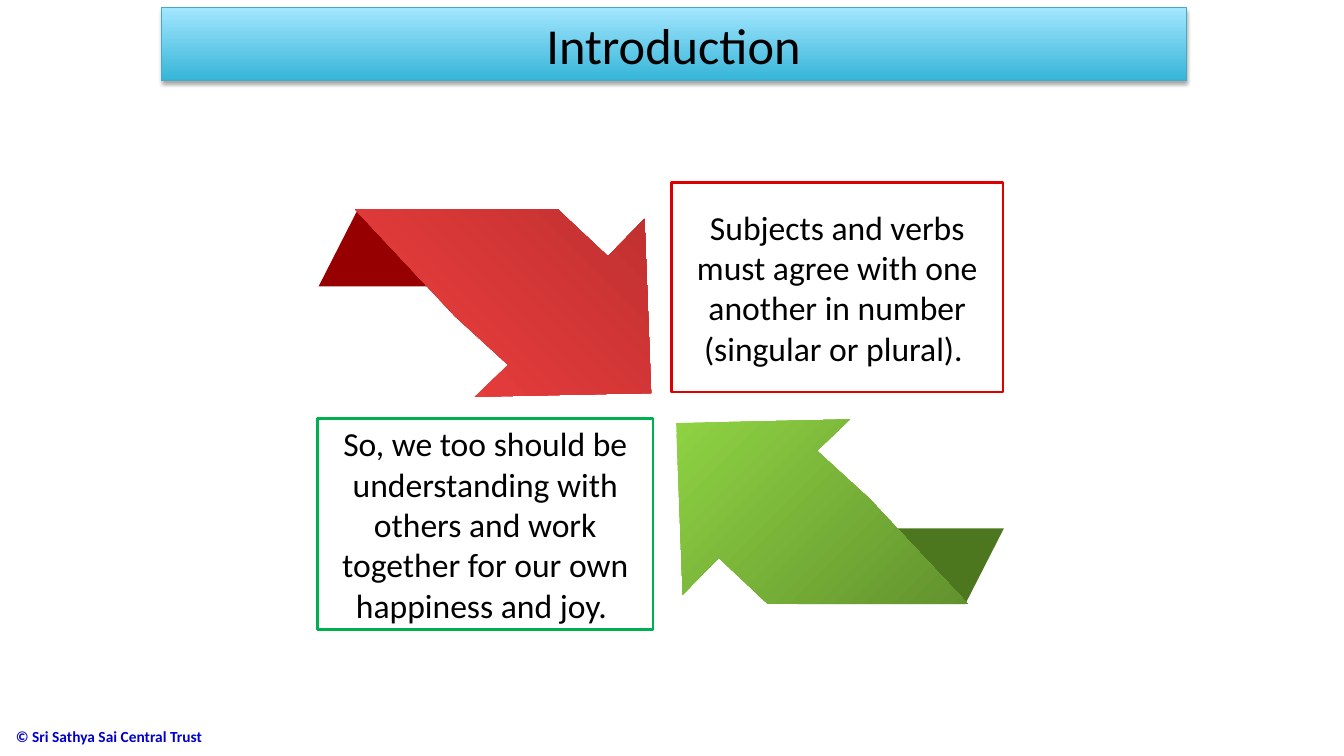
from pptx import Presentation
from pptx.dml.color import RGBColor
from pptx.enum.shapes import MSO_SHAPE
from pptx.enum.text import MSO_ANCHOR, PP_ALIGN
from pptx.oxml import parse_xml
from pptx.oxml.ns import nsdecls
from pptx.util import Cm, Pt

BLACK = RGBColor(0x00, 0x00, 0x00)
WHITE = RGBColor(0xFF, 0xFF, 0xFF)
BLUE = RGBColor(0x00, 0x00, 0xCC)
SKY = RGBColor(0xA3, 0xE6, 0xFF)
TEAL = RGBColor(0x36, 0xB5, 0xD8)
TEAL_LINE = RGBColor(0x46, 0xAA, 0xC5)
RED = RGBColor(0xDE, 0x00, 0x00)
RED_FOLD = RGBColor(0x96, 0x00, 0x00)
RED_LIGHT = RGBColor(0xF2, 0x40, 0x40)
RED_DARK = RGBColor(0xC0, 0x30, 0x30)
GREEN = RGBColor(0x00, 0xB0, 0x50)
GREEN_FOLD = RGBColor(0x4D, 0x77, 0x1F)
GREEN_LIGHT = RGBColor(0x8E, 0xD2, 0x43)
GREEN_DARK = RGBColor(0x62, 0x92, 0x2E)

ARROW = [(0.47, 1), (0.57, 0.83), (0.41, 0.57), (0.11, 0), (0.72, 0),
         (0.87, 0.25), (0.98, 0.05), (1, 0.98)]
FOLD_WIDTH, FOLD_HEIGHT = 0.63, 0.41


def set_gradient(shape, start, end, angle):
    """Fill a shape with a two-colour linear gradient."""
    shape.fill.gradient()
    shape.fill.gradient_angle = angle
    for stop, color in zip(shape.fill.gradient_stops, (start, end)):
        stop.color.rgb = color


def write(tf, text, size, color, align, bold=False):
    """Put one formatted paragraph in a middle-anchored text frame."""
    tf.word_wrap = True
    tf.vertical_anchor = MSO_ANCHOR.MIDDLE
    p = tf.paragraphs[0]
    p.text = text
    p.alignment = align
    p.font.name = "Calibri"
    p.font.size = Pt(size)
    p.font.bold = bold
    p.font.color.rgb = color


def add_title(s, left, top, width, height):
    """Turn the title placeholder into the gradient banner."""
    sp = s.shapes.title
    sp.left, sp.top, sp.width, sp.height = left, top, width, height
    set_gradient(sp, SKY, TEAL, 270)
    sp.line.color.rgb = TEAL_LINE
    sp.line.width = Pt(0.75)
    sp._element.spPr.append(parse_xml(
        f'<a:effectLst {nsdecls("a")}><a:outerShdw blurRad="40000" dist="23000" '
        'dir="5400000" rotWithShape="0"><a:srgbClr val="000000">'
        '<a:alpha val="35000"/></a:srgbClr></a:outerShdw></a:effectLst>'))
    write(sp.text_frame, "Introduction", 36, BLACK, PP_ALIGN.CENTER)


def add_folded_arrow(s, left, top, width, height, fold, light, dark, angle, turned=False):
    """Draw an arrow with a folded tail, turned half a circle if asked."""
    fold_w, fold_h = int(width * FOLD_WIDTH), int(height * FOLD_HEIGHT)
    x = left + width - fold_w if turned else left
    y = top + height - fold_h if turned else top
    tail = s.shapes.add_shape(MSO_SHAPE.PARALLELOGRAM, x, y, fold_w, fold_h)
    tail.adjustments[0] = 0.51
    tail.fill.solid()
    tail.fill.fore_color.rgb = fold

    points = [(1 - fx, 1 - fy) if turned else (fx, fy) for fx, fy in ARROW]
    points = [(int(left + fx * width), int(top + fy * height)) for fx, fy in points]
    builder = s.shapes.build_freeform(*points[0])
    builder.add_line_segments(points[1:], close=True)
    head = builder.convert_to_shape()
    set_gradient(head, light, dark, angle)
    for sp in (tail, head):
        sp.line.fill.background()
        sp.shadow.inherit = False


def add_statement(s, left, top, width, height, text, color):
    """Add a white box with a coloured outline and centred text."""
    sp = s.shapes.add_shape(MSO_SHAPE.RECTANGLE, left, top, width, height)
    sp.shadow.inherit = False
    sp.fill.solid()
    sp.fill.fore_color.rgb = WHITE
    sp.line.color.rgb = color
    sp.line.width = Pt(2)
    write(sp.text_frame, text, 24, BLACK, PP_ALIGN.CENTER)


def add_copyright(s, left, top, width, height):
    """Add the copyright line at the foot of the slide."""
    tf = s.shapes.add_textbox(left, top, width, height).text_frame
    write(tf, "© Sri Sathya Sai Central Trust", 11, BLUE, PP_ALIGN.LEFT, bold=True)


def main():
    """Build and save the slide."""
    prs = Presentation()
    prs.slide_width, prs.slide_height = Cm(33.87), Cm(19.05)
    s = prs.slides.add_slide(prs.slide_layouts[5])
    add_copyright(s, Cm(0.15), Cm(18.03), Cm(8.97), Cm(1.04))
    add_title(s, Cm(4.06), Cm(0.2), Cm(25.83), Cm(1.83))
    add_folded_arrow(s, Cm(17.04), Cm(10.57), Cm(8.26), Cm(4.65),
                     GREEN_FOLD, GREEN_LIGHT, GREEN_DARK, 315, turned=True)
    add_folded_arrow(s, Cm(8.03), Cm(5.28), Cm(8.38), Cm(4.72),
                     RED_FOLD, RED_LIGHT, RED_DARK, 45)
    add_statement(s, Cm(16.92), Cm(4.6), Cm(8.36), Cm(5.28),
                  "Subjects and verbs must agree with one another in number "
                  "(singular or plural). ", RED)
    add_statement(s, Cm(8), Cm(10.54), Cm(8.46), Cm(5.33),
                  "So, we too should be understanding with others and work "
                  "together for our own happiness and joy. ", GREEN)
    prs.save("out.pptx")


if __name__ == "__main__":
    main()
